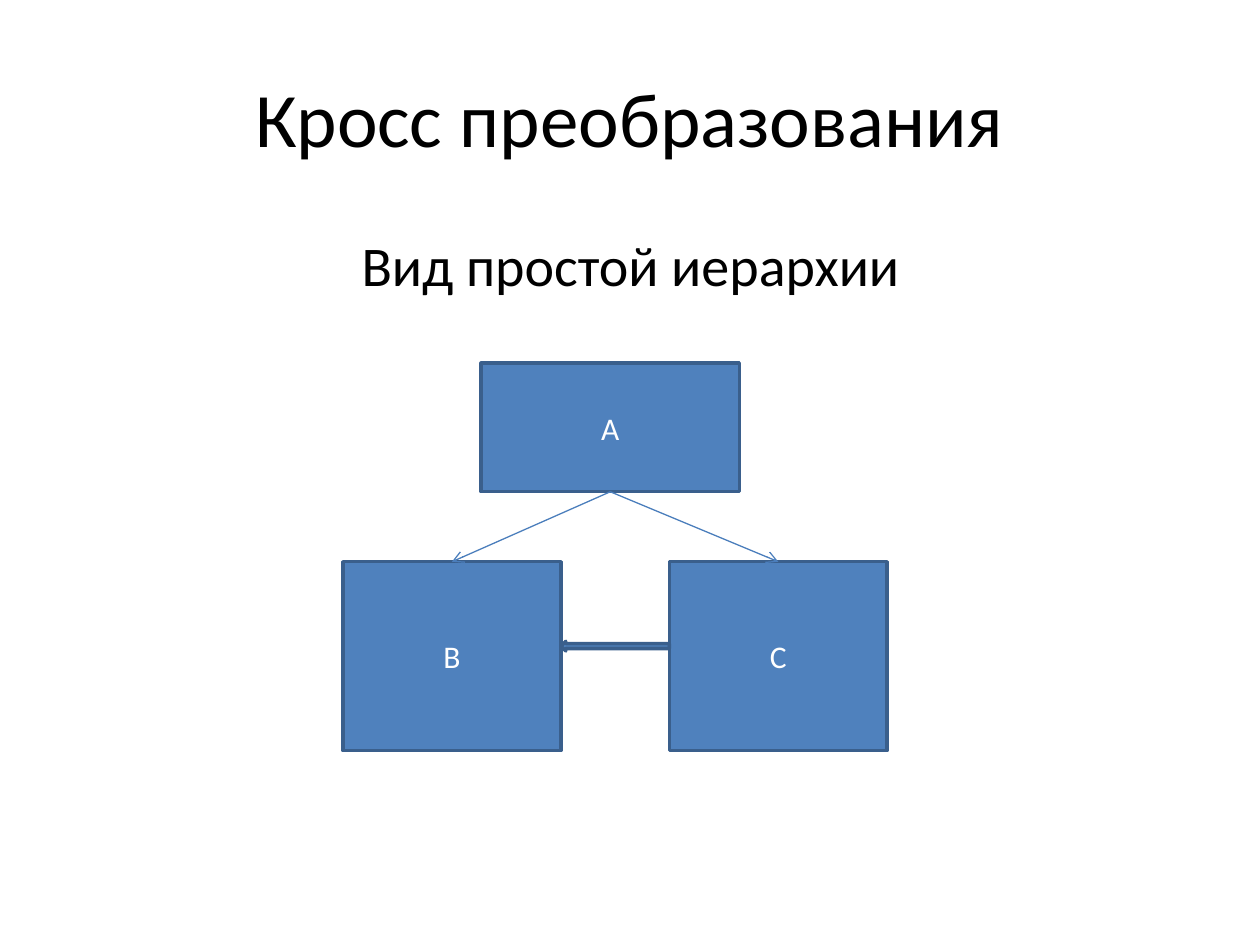
from typing import NamedTuple

from lxml import etree
from pptx import Presentation
from pptx.dml.color import RGBColor
from pptx.enum import shapes, text
from pptx.oxml import ns
from pptx.util import Pt

FONT = "Calibri"
BLACK, WHITE = "000000", "FFFFFF"
NODE_FILL, NODE_LINE, LINK_LINE = "4F81BD", "3A5F8C", "4B7EBC"
TOP, LEFT_SIDE, BOTTOM = 0, 1, 2


class Area(NamedTuple):
    left: float
    top: float
    width: float
    height: float

    def lengths(self) -> list:
        return [Pt(value) for value in self]


class Heading(NamedTuple):
    wording: str
    area: Area
    size: float
    anchor: text.MSO_ANCHOR


class Node(NamedTuple):
    label: str
    area: Area


HEADINGS = [
    Heading("Кросс преобразования", Area(36, 21.6, 648, 90), 44, text.MSO_ANCHOR.MIDDLE),
    Heading("Вид простой иерархии", Area(36.5, 128, 648, 356), 32, text.MSO_ANCHOR.TOP),
]
PARENT = Node("A", Area(275, 207.5, 147.5, 73.5))
CHILDREN = [Node(label, Area(left, 321, 124.5, 108))
            for label, left in (("B", 196), ("C", 382.5))]


def colour(value: str) -> RGBColor:
    return RGBColor.from_string(value)


def write(frame, wording: str, size: float, ink: str, anchor) -> None:
    frame.text = wording
    frame.word_wrap = True
    frame.vertical_anchor = anchor
    para = frame.paragraphs[0]
    para.alignment = text.PP_ALIGN.CENTER
    font = para.runs[0].font
    font.name, font.size = FONT, Pt(size)
    font.color.rgb = colour(ink)


def add_heading(page, heading: Heading) -> None:
    box = page.shapes.add_textbox(*heading.area.lengths())
    write(box.text_frame, heading.wording, heading.size, BLACK, heading.anchor)


def add_block(page, kind, area: Area):
    block = page.shapes.add_shape(kind, *area.lengths())
    block.shadow.inherit = False
    block.fill.solid()
    block.fill.fore_color.rgb = colour(NODE_FILL)
    block.line.color.rgb = colour(NODE_LINE)
    block.line.width = Pt(2)
    return block


def add_node(page, node: Node):
    box = add_block(page, shapes.MSO_SHAPE.RECTANGLE, node.area)
    write(box.text_frame, node.label, 18, WHITE, text.MSO_ANCHOR.MIDDLE)
    return box


def add_link(page, parent, child) -> None:
    """Draw a thin arrow from the parent's bottom to the child's top."""
    link = page.shapes.add_connector(shapes.MSO_CONNECTOR.STRAIGHT, 0, 0, 0, 0)
    link.begin_connect(parent, BOTTOM)
    link.end_connect(child, TOP)
    link.line.color.rgb = colour(LINK_LINE)
    link.line.width = Pt(0.75)
    etree.SubElement(link.line._get_or_add_ln(), ns.qn("a:tailEnd"), type="arrow")
    etree.SubElement(link._element.spPr, ns.qn("a:effectLst"))


def main() -> None:
    deck = Presentation()
    deck.slide_width, deck.slide_height = Pt(720), Pt(540)
    page = deck.slides.add_slide(deck.slide_layouts[6])

    for heading in HEADINGS:
        add_heading(page, heading)

    parent = add_node(page, PARENT)
    children = [add_node(page, node) for node in CHILDREN]
    for child in children:
        add_link(page, parent, child)

    first, second = (node.area for node in CHILDREN)
    gap_left = first.left + first.width
    add_block(page, shapes.MSO_SHAPE.LEFT_ARROW,
              Area(gap_left, 366.5, second.left - gap_left, 5.5))

    deck.save("out.pptx")


if __name__ == "__main__":
    main()
